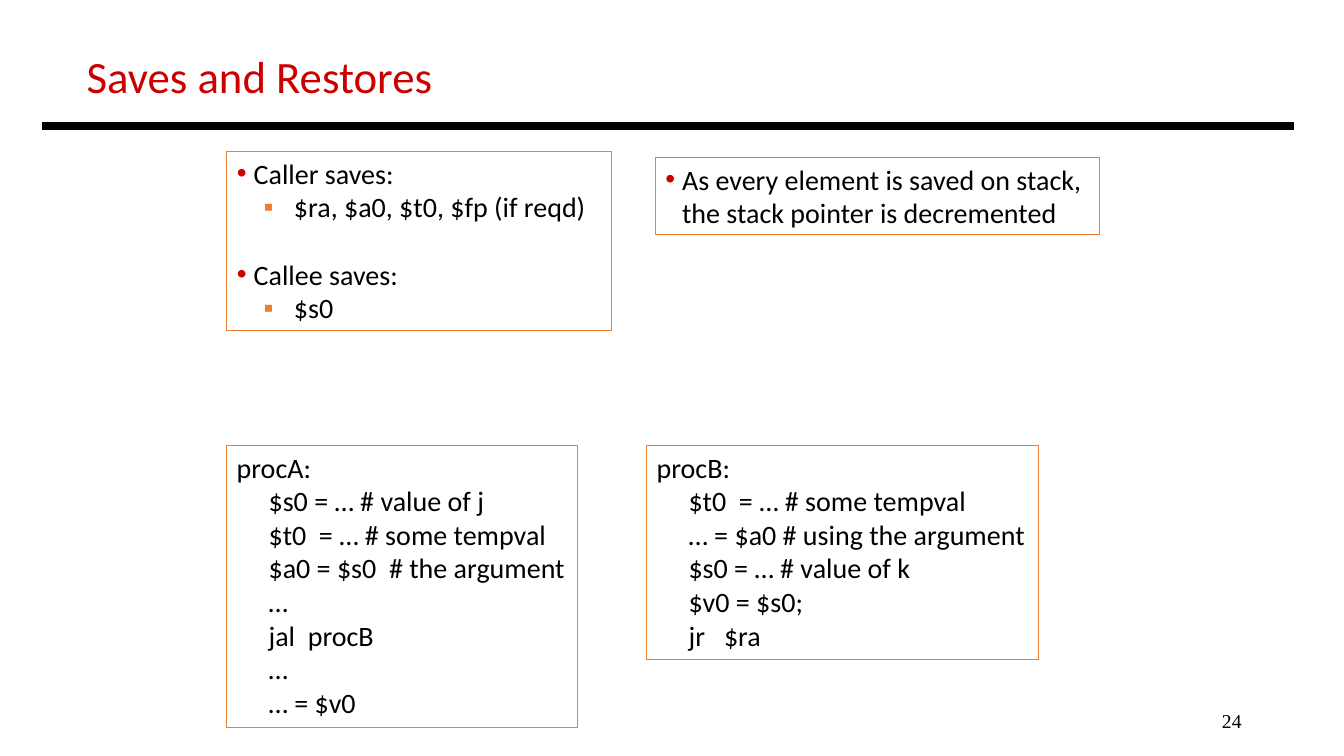
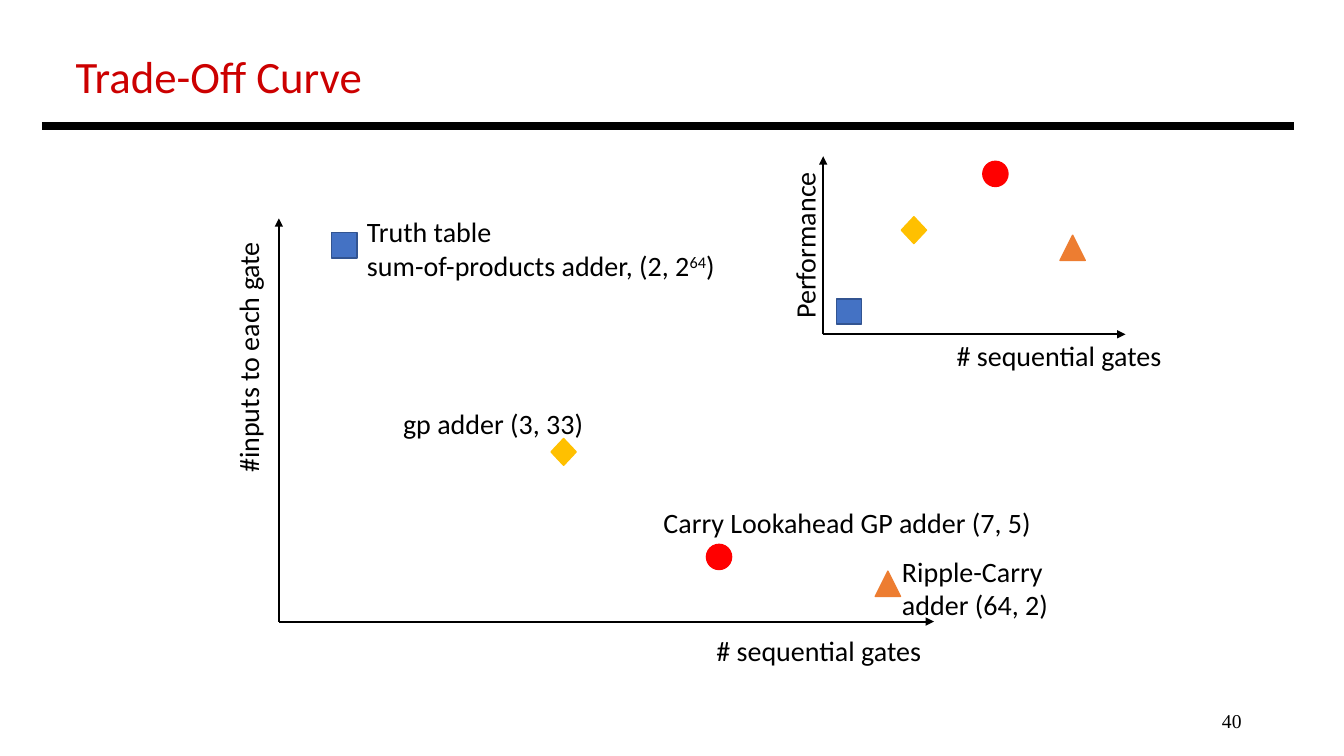
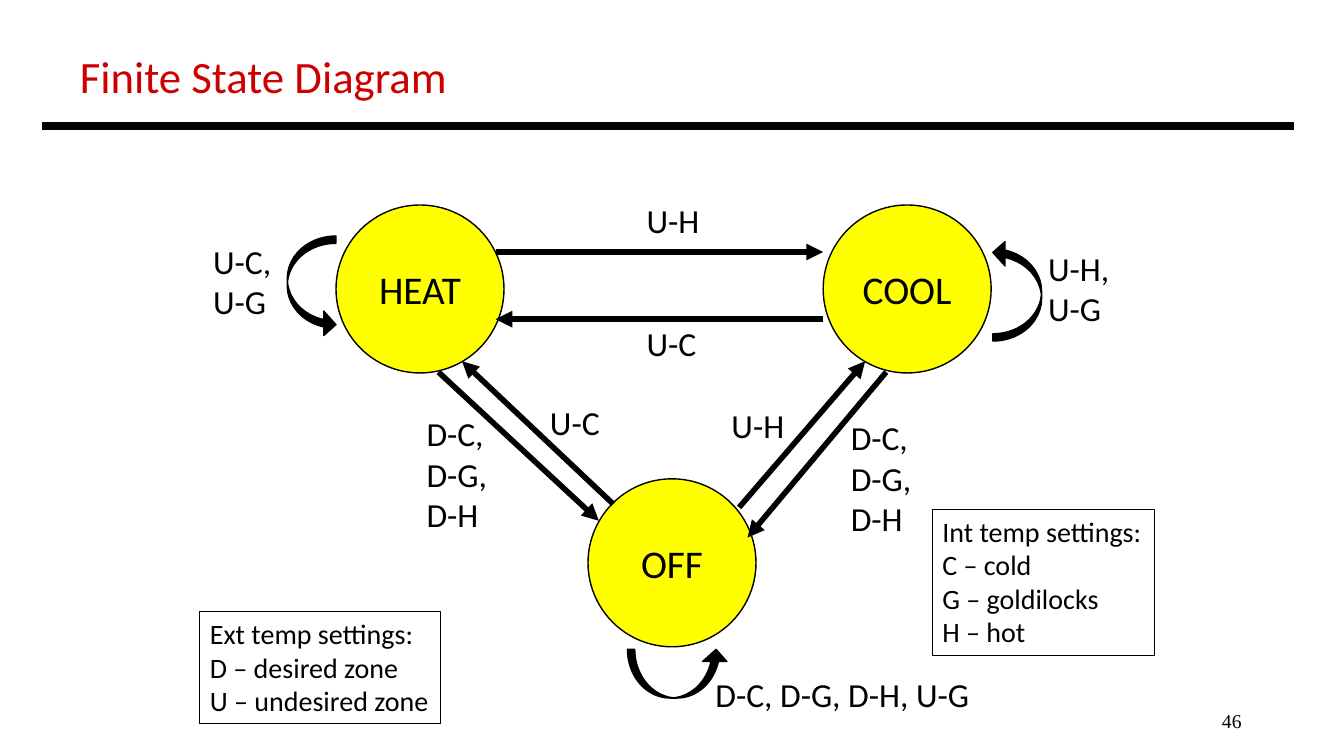
"""Build three lecture slides: register saves, adder trade-offs and a thermostat state machine."""
from lxml import etree
from pptx import Presentation
from pptx import util as u
from pptx.dml.color import RGBColor
from pptx.enum import shapes, text
from pptx.oxml import ns

CELL = u.Inches(1 / 12)
COLUMNS, ROWS = 160, 90
BLACK = RGBColor(0x00, 0x00, 0x00)
CRIMSON = RGBColor(0xCC, 0x00, 0x00)
ORANGE = RGBColor(0xED, 0x7D, 0x31)
BLUE = RGBColor(0x44, 0x72, 0xC4)
NAVY = RGBColor(0x32, 0x54, 0x91)
RED = RGBColor(0xFF, 0x00, 0x00)
GOLD = RGBColor(0xFF, 0xC0, 0x00)
YELLOW = RGBColor(0xFF, 0xFF, 0x00)
LINE_STYLES = {"•": (2, -2, CRIMSON), "▪": (6.8, -3.6, ORANGE), ">": (3.8, 0, None)}


def add_text(slide, lines, left, top, width, height=None, holder=None, size=20, font="Calibri",
             color=BLACK, outline=None, rotation=0, align="LEFT", anchor="TOP", wrap=False, gap=0):
    """Write lines into a new text box or a given holder; ^ encloses a superscript."""
    lines = lines.split("\n")
    height = height or 1.2 + len(lines) * size * 0.2025
    holder = holder or slide.shapes.add_textbox(0, 0, 0, 0)
    holder.left, holder.top, holder.width, holder.height = (
        round(cells * CELL) for cells in (left, top, width, height))
    holder.rotation = rotation
    if outline is not None:
        holder.line.color.rgb = outline
        holder.line.width = u.Pt(0.75)
    frame = holder.text_frame
    frame.word_wrap = wrap
    frame.auto_size = text.MSO_AUTO_SIZE.NONE
    frame.vertical_anchor = text.MSO_ANCHOR[anchor]
    for index, line in enumerate(lines):
        paragraph = frame.add_paragraph() if index else frame.paragraphs[0]
        paragraph.alignment = text.PP_ALIGN[align]
        paragraph.space_before = u.Pt(gap if index and line[0] == "•" else 0)
        if line[0] in LINE_STYLES:
            margin, indent, bullet_color = LINE_STYLES[line[0]]
            properties = paragraph._p.get_or_add_pPr()
            properties.set("marL", str(round(margin * CELL)))
            properties.set("indent", str(round(indent * CELL)))
            if bullet_color is not None:
                fill = etree.SubElement(properties, ns.qn("a:buClr"))
                etree.SubElement(fill, ns.qn("a:srgbClr"), val=str(bullet_color))
                etree.SubElement(properties, ns.qn("a:buFont"), typeface="Arial")
                etree.SubElement(properties, ns.qn("a:buChar"), char=line[0])
            line = line[1:]
        for position, piece in enumerate(line.split("^")):
            run = paragraph.add_run()
            run.text = piece
            run.font.size, run.font.name = u.Pt(size), font
            run.font.color.rgb = color
            if position % 2:
                run._r.get_or_add_rPr().set("baseline", "30000")


def add_line(slide, start, end, weight, arrow=True):
    """Draw a black line, with an arrowhead at its end if wanted."""
    connector = slide.shapes.add_connector(
        shapes.MSO_CONNECTOR.STRAIGHT, *(round(cells * CELL) for cells in (*start, *end)))
    connector.line.color.rgb = BLACK
    connector.line.width = u.Pt(weight)
    if arrow:
        etree.SubElement(connector.line._get_or_add_ln(), ns.qn("a:tailEnd"), type="triangle")
    etree.SubElement(connector._element.spPr, ns.qn("a:effectLst"))


presentation = Presentation()
presentation.slide_width = COLUMNS * CELL
presentation.slide_height = ROWS * CELL

slides = []
for layout, title, number, left, width in (
        ("Two Content", "Saves and Restores", "24", 9.1, 44),
        ("Title Only", "Trade-Off Curve", "40", 7.8, 37),
        ("Title Only", "Finite State Diagram", "46", 8.3, 46.7)):
    slide = presentation.slides.add_slide(presentation.slide_layouts.get_by_name(layout))
    add_text(slide, title, left, 5.2, width, holder=slide.shapes.title, size=32, color=CRIMSON)
    add_text(slide, number, 113, 83.4, 36, 4.8, size=14, font="Times New Roman",
             align="RIGHT", anchor="MIDDLE")
    add_line(slide, (5, 15), (154, 15), 6, arrow=False)
    slides.append(slide)
saves, tradeoff, states = slides

caller_list, stack_list = list(saves.placeholders)[1:]
add_text(saves, "•Caller saves:\n▪$ra, $a0, $t0, $fp (if reqd)\n•Callee saves:\n▪$s0",
         27, 18, 45.8, 21.4, holder=caller_list, outline=ORANGE, wrap=True, gap=24)
add_text(saves, "•As every element is saved on stack, the stack pointer is decremented",
         78, 18.7, 52.9, 9.2, holder=stack_list, outline=ORANGE, wrap=True)
for code, left, width in (
        ("procA:\n>$s0 = … # value of j\n>$t0  = … # some tempval\n>$a0 = $s0  # the argument\n"
         ">…\n>jal  procB\n>…\n>… = $v0", 27, 41.8),
        ("procB:\n>$t0  = … # some tempval\n>… = $a0 # using the argument\n"
         ">$s0 = … # value of k\n>$v0 = $s0;\n>jr   $ra", 77, 46.6)):
    add_text(saves, code, left, 53, width, outline=ORANGE)

for origin, right, top in (((33.2, 74), 111.2, 26), ((98, 39.8), 134, 18.6)):
    add_line(tradeoff, origin, (right, origin[1]), 1.5)
    add_line(tradeoff, origin, (origin[0], top), 1.5)
for kind, height, fill, edge, places in (
        ("RECTANGLE", 3, BLUE, NAVY, ((39.5, 27.7), (99.6, 35.6))),
        ("ISOSCELES_TRIANGLE", 3, ORANGE, ORANGE, ((104.2, 68), (126.2, 28))),
        ("OVAL", 3, RED, RED, ((84.1, 64.8), (117, 19.2))),
        ("DIAMOND", 3.2, GOLD, GOLD, ((65.6, 52.2), (107.3, 25.8)))):
    for left, top in places:
        marker = tradeoff.shapes.add_shape(
            shapes.MSO_SHAPE[kind], *(round(cells * CELL) for cells in (left, top, 3, height)))
        marker.shadow.inherit = False
        marker.fill.solid()
        marker.fill.fore_color.rgb = fill
        marker.line.color.rgb = edge
        marker.line.width = u.Pt(1)
for label, left, top, width, rotation in (
        ("#inputs to each gate", 14.5, 39.8, 30.1, 270),
        ("# sequential gates", 84.1, 74.8, 27.1, 0),
        ("Truth table\nsum-of-products adder, (2, 2^64^)", 42.5, 25, 44.5, 0),
        ("gp adder (3, 33)", 46.8, 47.8, 24.1, 0),
        ("Carry Lookahead GP adder (7, 5)", 77.8, 59.6, 46.6, 0),
        ("Ripple-Carry\nadder (64, 2)", 106.2, 65.4, 19.9, 0),
        ("Performance", 85.8, 26.5, 20, 270),
        ("# sequential gates", 112.7, 39.7, 27.1, 0)):
    add_text(tradeoff, label, left, top, width, rotation=rotation)

for state, left, top in (("HEAT", 40, 24.4), ("COOL", 98, 24.4), ("OFF", 70, 57)):
    circle = states.shapes.add_shape(shapes.MSO_SHAPE.OVAL, 0, 0, 0, 0)
    circle.shadow.inherit = False
    circle.fill.solid()
    circle.fill.fore_color.rgb = YELLOW
    add_text(states, state, left, top, 20, 20, holder=circle, size=28, outline=BLACK,
             align="CENTER", anchor="MIDDLE")
    circle.line.width = u.Pt(1)
for start, end in (
        ((59, 30), (98, 30)), ((98, 38), (59, 38)),
        ((73, 60), (55, 43)), ((88, 60.4), (103, 43)),
        ((105.5, 44.3), (89, 64)), ((52.2, 44.3), (71.3, 62))):
    add_line(states, start, end, 4)
for left, top, rotation in ((77.8, 74.2, 270), (118.2, 28.6, 180), (34.2, 28.1, 0)):
    loop = states.shapes.add_shape(
        shapes.MSO_SHAPE.CURVED_RIGHT_ARROW,
        *(round(cells * CELL) for cells in (left, top, 5.8, 12)))
    loop.rotation = rotation
    loop.shadow.inherit = False
    for index, share in enumerate((0.15, 0.5, 0.25)):
        loop.adjustments[index] = share
    loop.fill.solid()
    loop.fill.fore_color.rgb = BLACK
    loop.line.color.rgb = BLACK
    loop.line.width = u.Pt(1)
for label, left, top, width in (
        ("U-H", 75.8, 23.2, 8.8), ("U-C", 75.8, 37.9, 8.4),
        ("U-C", 64.3, 47.3, 8.4), ("U-H", 85.9, 47.6, 8.8),
        ("D-C,\nD-G,\nD-H", 49.6, 48.6, 9.7), ("D-C,\nD-G,\nD-H", 100.1, 49.1, 9.7),
        ("U-C,\nU-G", 24.2, 28.1, 9.4), ("U-H,\nU-G", 123.6, 28.9, 9.8),
        ("D-C, D-G, D-H, U-G", 84, 79.6, 32.9)):
    add_text(states, label, left, top, width, size=24)
for legend, left, top, width in (
        ("Ext temp settings:\nD – desired zone\nU – undesired zone", 23.8, 72.8, 28.7),
        ("Int temp settings:\nC – cold\nG – goldilocks\nH – hot", 111, 60.6, 26.5)):
    add_text(states, legend, left, top, width, outline=BLACK)

presentation.save("out.pptx")
